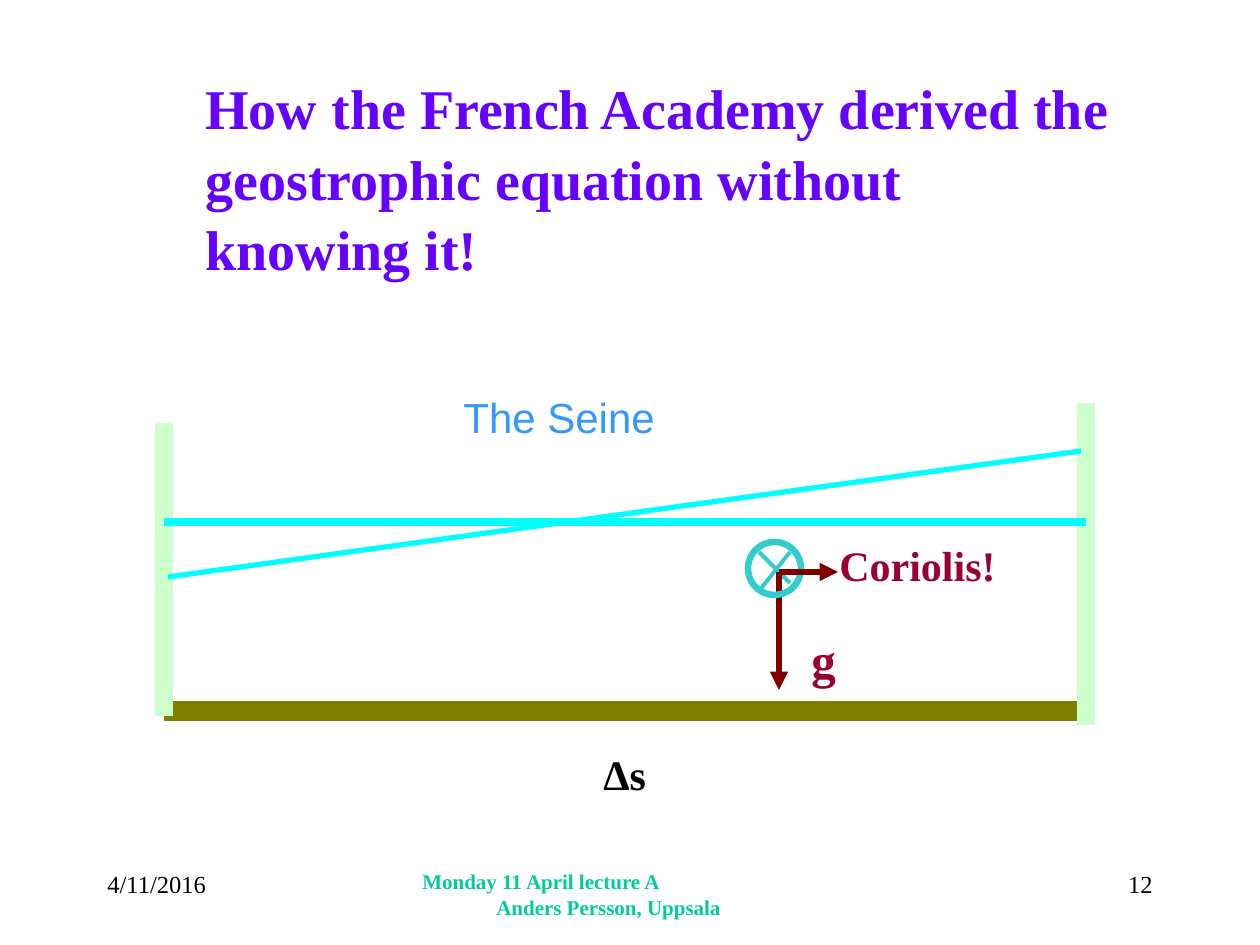
from dataclasses import dataclass

from pptx import Presentation
from pptx.dml.color import RGBColor
from pptx.enum.shapes import MSO_CONNECTOR, MSO_SHAPE
from pptx.enum.text import MSO_ANCHOR, PP_ALIGN
from pptx.oxml.ns import qn
from pptx.util import Emu, Pt
from lxml.etree import SubElement

SCALE = 914400 / 126
SERIF, SANS = "Times New Roman", "Arial"
BANK, WATER, FORCE, FLOW = "CCFFCC", "00FFFF", "800000", "33CCCC"
LEFT, RIGHT, LEVEL = 164, 1086, 522
MID_X, MID_Y = 779, 572


@dataclass
class Line:
    x1: int
    y1: int
    x2: int
    y2: int
    color: str
    width: float
    arrow: bool = False


@dataclass
class Label:
    text: str
    box: tuple[int, int, int, int]
    size: int
    color: str = "000000"
    bold: bool = False
    font: str = SERIF
    align: PP_ALIGN = PP_ALIGN.LEFT
    anchor: MSO_ANCHOR = MSO_ANCHOR.TOP
    wrap: bool = True
    hang: int = 0


def px(n: int) -> Emu:
    return Emu(round(n * SCALE))


def rgb(code: str) -> RGBColor:
    return RGBColor.from_string(code)


def put(obj, **values) -> None:
    """Set several attributes on one object."""
    for name, value in values.items():
        setattr(obj, name, value)


def draw_line(slide, item: Line) -> None:
    ends = map(px, (item.x1, item.y1, item.x2, item.y2))
    shape = slide.shapes.add_connector(MSO_CONNECTOR.STRAIGHT, *ends)
    shape.line.color.rgb = rgb(item.color)
    shape.line.width = Pt(item.width)
    if item.arrow:
        SubElement(shape.line._get_or_add_ln(), qn("a:tailEnd"), type="triangle")
    SubElement(shape._element.spPr, qn("a:effectLst"))


def draw_ring(slide, box: tuple[int, int, int, int]) -> None:
    ring = slide.shapes.add_shape(MSO_SHAPE.OVAL, *map(px, box))
    ring.shadow.inherit = False
    ring.fill.background()
    ring.line.color.rgb = rgb(FLOW)
    ring.line.width = Pt(3.75)


def draw_label(slide, item: Label) -> None:
    frame = slide.shapes.add_textbox(*map(px, item.box)).text_frame
    put(frame, word_wrap=item.wrap, vertical_anchor=item.anchor)
    para = frame.paragraphs[0]
    put(para, text=item.text, alignment=item.align, line_spacing=1.05)
    for run in para.runs:
        put(run.font, name=item.font, size=Pt(item.size), bold=item.bold)
        run.font.color.rgb = rgb(item.color)
    if item.hang:
        props = para._p.get_or_add_pPr()
        props.set("marL", str(px(item.hang)))
        props.set("indent", str(-px(item.hang)))


BACK = [
    Line(LEFT, 711, RIGHT, 711, "808000", 11.75),
    Line(RIGHT, 725, RIGHT, 403, BANK, 9.75),
    Line(LEFT, 716, LEFT, 423, BANK, 9.75),
    Line(759, 552, 790, 583, FLOW, 2.25),
    Line(790, 552, 759, 591, FLOW, 2.25),
    Line(MID_X, MID_Y, MID_X, 690, FORCE, 3.5, True),
]
FRONT = [
    Line(LEFT, LEVEL, RIGHT, LEVEL, WATER, 4.5),
    Line(MID_X, MID_Y, 838, MID_Y, FORCE, 3.5, True),
    Line(168, 577, 1081, 451, WATER, 3),
]
MARK = {"bold": True, "anchor": MSO_ANCHOR.MIDDLE, "wrap": False}
LABELS = [
    Label("How the French Academy derived the geostrophic equation "
          "without knowing it!", (193, 64, 929, 214), 32, "6600FF", True),
    Label("The Seine", (451, 383, 217, 63), 24, "3399FF", font=SANS, wrap=False),
    Label("Coriolis!", (827, 532, 183, 63), 24, "990033", **MARK),
    Label("g", (799, 621, 50, 72), 28, "990033", **MARK),
    Label("Δs", (591, 741, 68, 63), 24, **MARK),
    Label("4/11/2016", (95, 861, 262, 63), 14),
    Label("Monday 11 April lecture A\vAnders Persson, Uppsala",
          (410, 861, 431, 63), 12, "00CC99", True, hang=74),
    Label("12", (903, 861, 262, 63), 14, align=PP_ALIGN.RIGHT),
]


def main() -> None:
    deck = Presentation()
    put(deck, slide_width=px(1260), slide_height=px(945))
    slide = deck.slides.add_slide(deck.slide_layouts[6])
    for item in BACK:
        draw_line(slide, item)
    draw_ring(slide, (748, 542, 53, 53))
    for item in FRONT:
        draw_line(slide, item)
    for item in LABELS:
        draw_label(slide, item)
    deck.save("out.pptx")


if __name__ == "__main__":
    main()
